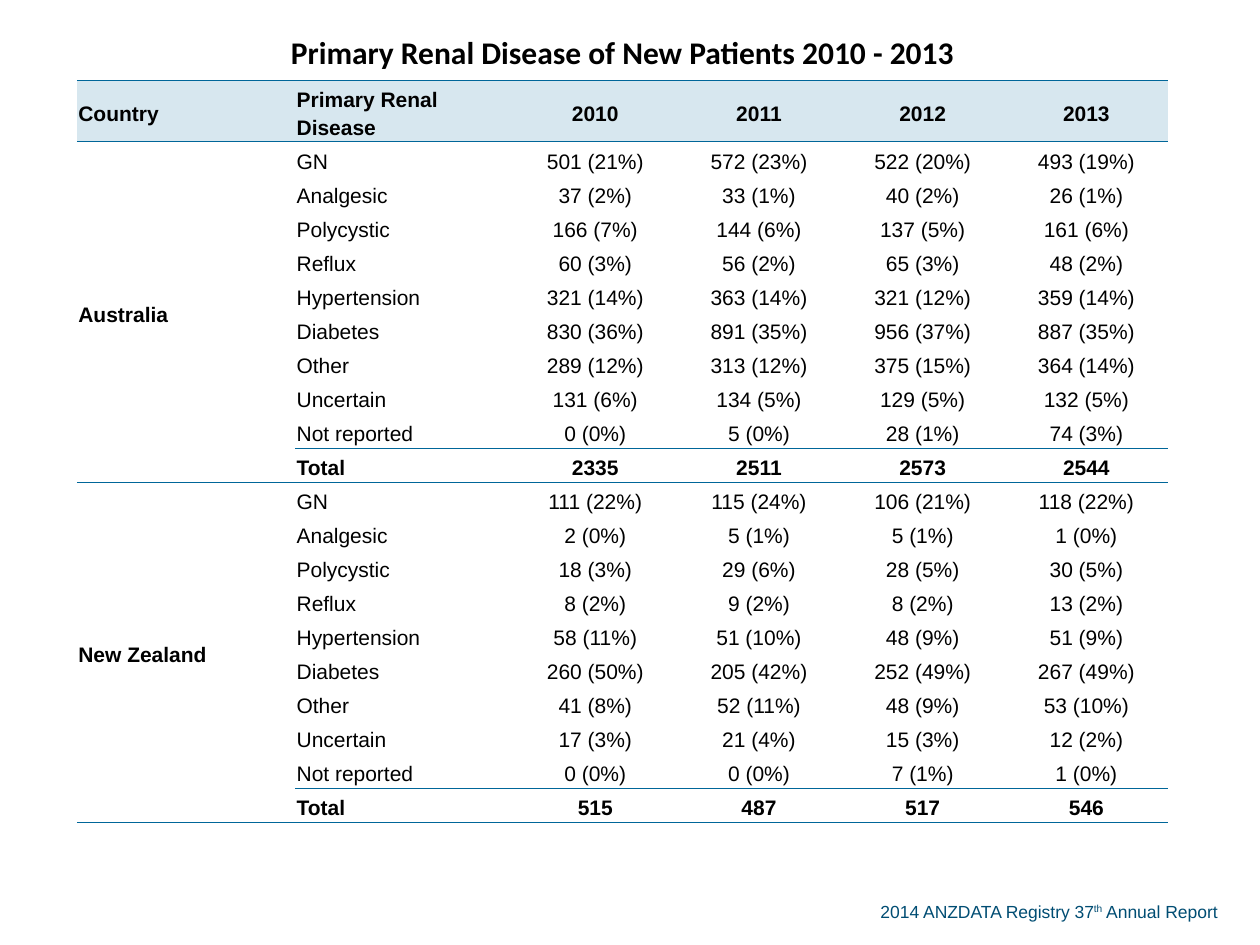
from lxml.etree import SubElement
from pptx import Presentation
from pptx.dml.color import RGBColor
from pptx.enum.text import MSO_ANCHOR, MSO_AUTO_SIZE, PP_ALIGN
from pptx.oxml.ns import qn
from pptx.util import Cm, Pt

YEARS = ["2010", "2011", "2012", "2013"]
DISEASES = ["GN", "Analgesic", "Polycystic", "Reflux", "Hypertension", "Diabetes",
            "Other", "Uncertain", "Not reported", "Total"]
# One line per disease, one value per year
PATIENTS = {
    "Australia": [
        ["501 (21%)", "572 (23%)", "522 (20%)", "493 (19%)"],
        ["37 (2%)", "33 (1%)", "40 (2%)", "26 (1%)"],
        ["166 (7%)", "144 (6%)", "137 (5%)", "161 (6%)"],
        ["60 (3%)", "56 (2%)", "65 (3%)", "48 (2%)"],
        ["321 (14%)", "363 (14%)", "321 (12%)", "359 (14%)"],
        ["830 (36%)", "891 (35%)", "956 (37%)", "887 (35%)"],
        ["289 (12%)", "313 (12%)", "375 (15%)", "364 (14%)"],
        ["131 (6%)", "134 (5%)", "129 (5%)", "132 (5%)"],
        ["0 (0%)", "5 (0%)", "28 (1%)", "74 (3%)"],
        ["2335", "2511", "2573", "2544"],
    ],
    "New Zealand": [
        ["111 (22%)", "115 (24%)", "106 (21%)", "118 (22%)"],
        ["2 (0%)", "5 (1%)", "5 (1%)", "1 (0%)"],
        ["18 (3%)", "29 (6%)", "28 (5%)", "30 (5%)"],
        ["8 (2%)", "9 (2%)", "8 (2%)", "13 (2%)"],
        ["58 (11%)", "51 (10%)", "48 (9%)", "51 (9%)"],
        ["260 (50%)", "205 (42%)", "252 (49%)", "267 (49%)"],
        ["41 (8%)", "52 (11%)", "48 (9%)", "53 (10%)"],
        ["17 (3%)", "21 (4%)", "15 (3%)", "12 (2%)"],
        ["0 (0%)", "0 (0%)", "7 (1%)", "1 (0%)"],
        ["515", "487", "517", "546"],
    ],
}


def color(hex_string):
    return RGBColor.from_string(hex_string)


class SlideBuilder:
    text_color = "000000"
    footer_color = "004D73"
    header_fill = "D7E7EF"
    rule_color = "006699"
    body_font = "Arial"
    title_font = "Calibri"

    def __init__(self, slide):
        self.slide = slide

    def style_font(self, font, name, size, hex_string, bold=False):
        font.name, font.size, font.bold = name, Pt(size), bold
        font.color.rgb = color(hex_string)

    def add_table(self, left, top, widths, heights):
        shape = self.slide.shapes.add_table(len(heights), len(widths), Cm(left), Cm(top),
                                            Cm(sum(widths)), Cm(sum(heights)))
        table = shape.table
        table.first_row = table.horz_banding = False
        for column, width in zip(table.columns, widths):
            column.width = Cm(width)
        for row, height in zip(table.rows, heights):
            row.height = Cm(height)
        return table

    def fill_cell(self, cell, text, bold=False, centered=False, title=False):
        cell.vertical_anchor = MSO_ANCHOR.MIDDLE
        cell.margin_left = cell.margin_right = cell.margin_top = Cm(0.03)
        cell.margin_bottom = 0
        cell.text = text
        paragraph = cell.text_frame.paragraphs[0]
        paragraph.alignment = PP_ALIGN.CENTER if centered else PP_ALIGN.LEFT
        if title:
            self.style_font(paragraph.font, self.title_font, 18, self.text_color, True)
        else:
            paragraph.line_spacing = 1.19
            paragraph.space_after = Pt(14)
            self.style_font(paragraph.font, self.body_font, 12, self.text_color, bold)

    def finish_cell(self, cell, top_rule, bottom_rule, shaded):
        properties = cell._tc.get_or_add_tcPr()
        for side, ruled in (("L", False), ("R", False), ("T", top_rule), ("B", bottom_rule)):
            line = SubElement(properties, qn(f"a:ln{side}"), w=str(Pt(0.5)))
            if ruled:
                fill = SubElement(line, qn("a:solidFill"))
                SubElement(fill, qn("a:srgbClr"), val=self.rule_color)
            else:
                SubElement(line, qn("a:noFill"))
        if shaded:
            cell.fill.solid()
            cell.fill.fore_color.rgb = color(self.header_fill)
        else:
            cell.fill.background()

    def add_footer(self, left, top, width, height, parts):
        shape = self.slide.shapes.add_textbox(Cm(left), Cm(top), Cm(width), Cm(height))
        frame = shape.text_frame
        frame.word_wrap = True
        frame.auto_size = MSO_AUTO_SIZE.SHAPE_TO_FIT_TEXT
        paragraph = frame.paragraphs[0]
        for text, raised in parts:
            run = paragraph.add_run()
            run.text = text
            if raised:
                run._r.get_or_add_rPr().set("baseline", "30000")
        self.style_font(paragraph.font, self.body_font, 10, self.footer_color)


def main():
    presentation = Presentation()
    presentation.slide_width, presentation.slide_height = Cm(25.4), Cm(19.05)
    builder = SlideBuilder(presentation.slides.add_slide(presentation.slide_layouts[6]))

    # Footer
    builder.add_footer(17.5, 18.03, 7.6, 0.69, [
        ("2014 ANZDATA Registry 37", False), ("th", True), (" Annual Report", False)])

    # Table grid
    group_size = len(DISEASES)
    body_rows = group_size * len(PATIENTS)
    heights = [1.09, 1.17] + [13.72 / body_rows] * body_rows
    table = builder.add_table(1.55, 0.53, [4.4] * 2 + [3.3] * len(YEARS), heights)

    # Title and header rows
    table.cell(0, 0).merge(table.cell(0, len(YEARS) + 1))
    builder.fill_cell(table.cell(0, 0), "Primary Renal Disease of New Patients 2010 - 2013",
                      centered=True, title=True)
    for column, text in enumerate(["Country", "Primary Renal Disease"] + YEARS):
        builder.fill_cell(table.cell(1, column), text, bold=True, centered=column > 1)

    # Country groups
    full_rules, partial_rules = {0, 1}, set()
    for group, (country, lines) in enumerate(PATIENTS.items()):
        first = 2 + group * group_size
        last = first + group_size - 1
        full_rules.add(last)
        partial_rules.add(last - 1)
        for row, (disease, values) in enumerate(zip(DISEASES, lines), first):
            builder.fill_cell(table.cell(row, 0), country if row == first else "", bold=True)
            for column, text in enumerate([disease] + values, 1):
                builder.fill_cell(table.cell(row, column), text, bold=row == last,
                                  centered=column > 1)
        table.cell(first, 0).merge(table.cell(last, 0))

    # Rules and shading
    for row in range(len(heights)):
        for column in range(len(YEARS) + 2):
            cell = table.cell(row, column)
            rules = full_rules | partial_rules if column else full_rules
            bottom = row + cell.span_height - 1 if cell.is_merge_origin else row
            builder.finish_cell(cell, row - 1 in rules, bottom in rules, shaded=row == 1)

    presentation.save("out.pptx")


if __name__ == "__main__":
    main()
